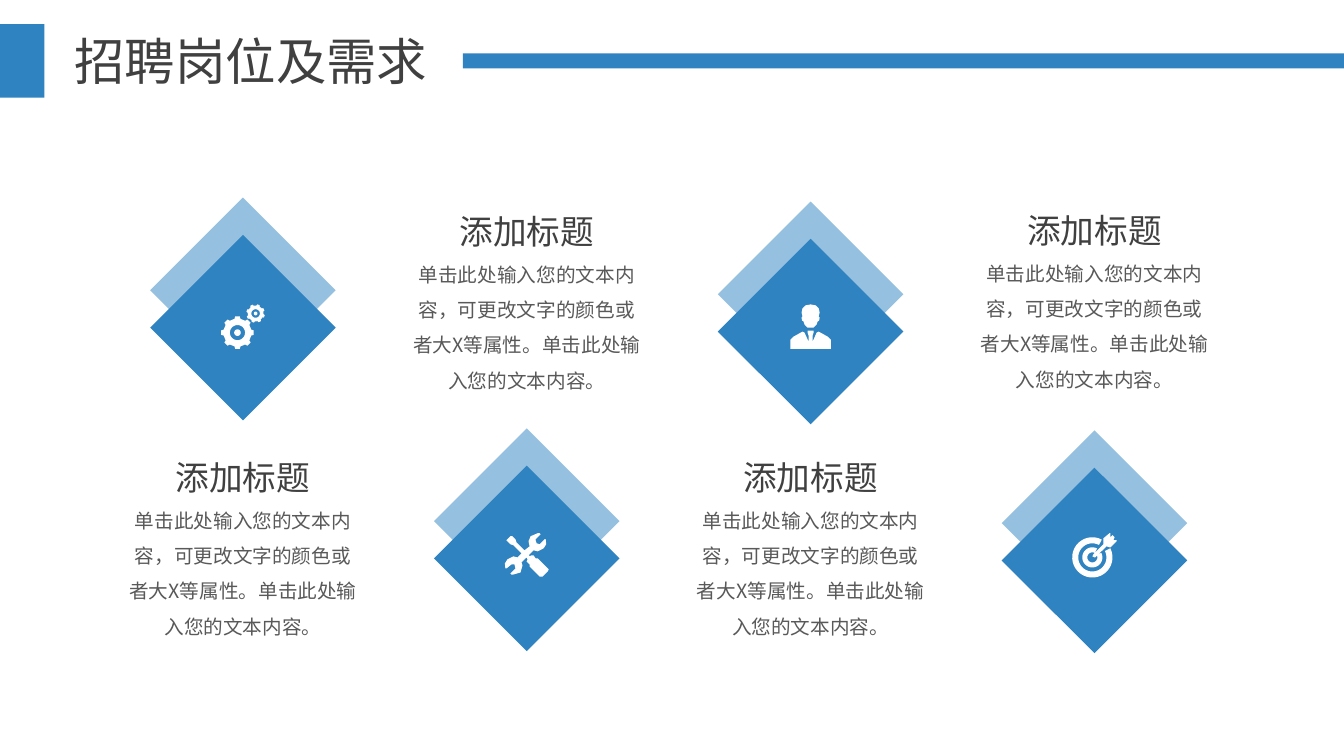
from math import cos, radians, sin

from lxml.etree import SubElement
from pptx import Presentation
from pptx.dml.color import RGBColor
from pptx.enum.shapes import MSO_SHAPE
from pptx.enum.text import MSO_AUTO_SIZE, PP_ALIGN
from pptx.oxml.ns import qn
from pptx.util import Inches, Pt

FONT = "Noto Sans CJK SC"
BLUE, WHITE, DARK, GRAY = "2E83C0", "FFFFFF", "404040", "595959"
TITLE = "招聘岗位及需求"
HEADING = "添加标题"
BODY = "单击此处输入您的文本内容，可更改文字的颜色或者大X等属性。单击此处输入您的文本内容。"


def arc(x, y, radius, start=0, end=360, step=10):
    count = max(1, round(abs(end - start) / step))
    angles = [radians(start + (end - start) * i / count) for i in range(count + 1)]
    return [(x + radius * cos(a), y + radius * sin(a)) for a in angles]


def gear(x, y, radius, teeth=8, turn=0):
    """Outlines of a toothed wheel, its hole and the dot in the hole."""
    rim = []
    for tooth in range(teeth):
        for share, offset in ((0.86, -12), (1, -8), (1, 8), (0.86, 12)):
            angle = radians(turn + 360 / teeth * tooth + offset)
            rim.append((x + share * radius * cos(angle), y + share * radius * sin(angle)))
    return [rim, arc(x, y, radius * 0.46), arc(x, y, radius * 0.2)]


def open_ring(x, y, outer, inner):
    """A ring with a gap at the upper right for the dart."""
    return arc(x, y, outer, -27, 298) + arc(x, y, inner, 298, -27)


def mirrored(half, axis=20):
    return ([(axis + x, y) for x, y in half]
            + [(axis - x, y) for x, y in reversed(half)])


# Icon outlines, in hundredths of an inch from the icon's top left corner
GEARS = gear(16, 28, 16.3) + gear(34, 9, 9.2, turn=18)
PERSON = [
    mirrored([(0, 0), (5, 1), (8, 4), (9, 8), (8, 12), (9, 13), (8.5, 16),
              (7, 17), (6, 20), (3, 23), (0, 23)]),
    mirrored([(0, 26), (3, 26), (3, 28), (2, 31), (2, 37), (6, 28), (8, 27),
              (17, 32), (20, 35), (20, 44), (0, 44)]),
]
TOOLS = [[
    (43, 35), (33, 25), (31, 25), (29, 22), (26, 22), (26, 23), (24, 22), (29, 17),
    (33, 18), (39, 15), (41.5, 11), (41, 6), (40, 6), (35, 11), (32, 10), (31, 7),
    (31, 6), (36, 1), (35, 0), (33, 0), (26, 3), (24, 8), (25, 13), (20, 17),
    (12, 9), (11, 6), (8, 3), (6, 3), (2, 7), (3, 8), (6, 11), (9, 12), (17, 20),
    (13, 24), (9, 23), (3, 26), (0.5, 30), (1, 35), (2, 35), (7, 31), (10, 31),
    (11, 35), (6, 40), (7, 41), (9, 41), (16, 39), (18, 32), (17, 29), (22, 24),
    (23, 26), (22, 28), (25, 31), (25, 33), (35, 43), (38, 43), (43, 38), (44, 36),
]]
TARGET = [
    open_ring(19, 24, 20, 14),
    open_ring(19, 24, 10, 5),
    [(36, 0), (37, 0), (37, 4), (39, 2), (41, 4), (40, 7), (43, 7), (43, 8), (37, 14),
     (36, 14), (33, 13), (22, 24), (21, 24), (19, 23), (20, 21), (30, 11), (30, 5)],
]

# One per column: icon, icon top, diamond top, heading top
COLUMNS = [
    (GEARS, 3.02, 1.96, 4.53),
    (TOOLS, 5.29, 4.25, 2.09),
    (PERSON, 3.02, 2.00, 4.53),
    (TARGET, 5.29, 4.27, 2.08),
]
FIRST_CENTER, COLUMN_STEP = 2.41, 2.815
DIAMOND, DIAMOND_DROP = 1.84, 0.37
HEADING_SIZE, BODY_SIZE = (1.53, 0.4), (2.31, 1.41)

deck = Presentation()
deck.slide_width, deck.slide_height = Inches(13.33), Inches(7.5)
page = deck.slides.add_slide(deck.slide_layouts[6])


def paint(shape, color, alpha=None):
    shape.shadow.inherit = False
    shape.fill.solid()
    shape.fill.fore_color.rgb = RGBColor.from_string(color)
    shape.line.fill.background()
    if alpha is not None:
        tint = shape.fill._xPr.find(qn("a:solidFill"))[0]
        SubElement(tint, qn("a:alpha")).set("val", str(alpha * 1000))


def add_block(kind, left, top, width, height, alpha=None):
    shape = page.shapes.add_shape(
        kind, Inches(left), Inches(top), Inches(width), Inches(height))
    paint(shape, BLUE, alpha)


def add_icon(outlines, center, top):
    across = [x for outline in outlines for x, _ in outline]
    left = center - (max(across) + min(across)) / 200
    placed = [[(Inches(left + x / 100), Inches(top + y / 100)) for x, y in outline]
              for outline in outlines]
    builder = page.shapes.build_freeform(*placed[0][0], scale=1.0)
    for index, outline in enumerate(placed):
        if index:
            builder.move_to(*outline[0])
        builder.add_line_segments(outline[1:], close=True)
    paint(builder.convert_to_shape(), WHITE)


def add_text(text, left, top, width, height, *, size, color, align=PP_ALIGN.CENTER,
             spacing=None, inset=True):
    box = page.shapes.add_textbox(
        Inches(left), Inches(top), Inches(width), Inches(height))
    frame = box.text_frame
    frame.word_wrap = True
    frame.auto_size = MSO_AUTO_SIZE.SHAPE_TO_FIT_TEXT
    if not inset:
        frame.margin_left = frame.margin_right = 0
        frame.margin_top = frame.margin_bottom = 0
    para = frame.paragraphs[0]
    para.alignment = align
    if spacing:
        para.line_spacing = spacing
    span = para.add_run()
    span.text = text
    span.font.size = Pt(size)
    span.font.color.rgb = RGBColor.from_string(color)
    span.font.name = FONT
    SubElement(span.font._element, qn("a:ea")).set("typeface", FONT)


add_block(MSO_SHAPE.RECTANGLE, 4.59, 0.53, 8.74, 0.15)
add_text(TITLE, 0.64, 0.25, 3.75, 0.71, size=36, color=DARK, align=PP_ALIGN.LEFT)
add_block(MSO_SHAPE.RECTANGLE, 0, 0.24, 0.44, 0.73)

for column, (icon, icon_top, diamond_top, heading_top) in enumerate(COLUMNS):
    center = FIRST_CENTER + column * COLUMN_STEP
    for drop, alpha in ((0, 50), (DIAMOND_DROP, None)):
        add_block(MSO_SHAPE.DIAMOND, center - DIAMOND / 2, diamond_top + drop,
                  DIAMOND, DIAMOND, alpha)
    add_icon(icon, center, icon_top)
    add_text(HEADING, center - HEADING_SIZE[0] / 2, heading_top, *HEADING_SIZE,
             size=24, color=DARK, inset=False)
    add_text(BODY, center - BODY_SIZE[0] / 2, heading_top + HEADING_SIZE[1], *BODY_SIZE,
             size=14, color=GRAY, spacing=1.5, inset=False)

deck.save("out.pptx")
